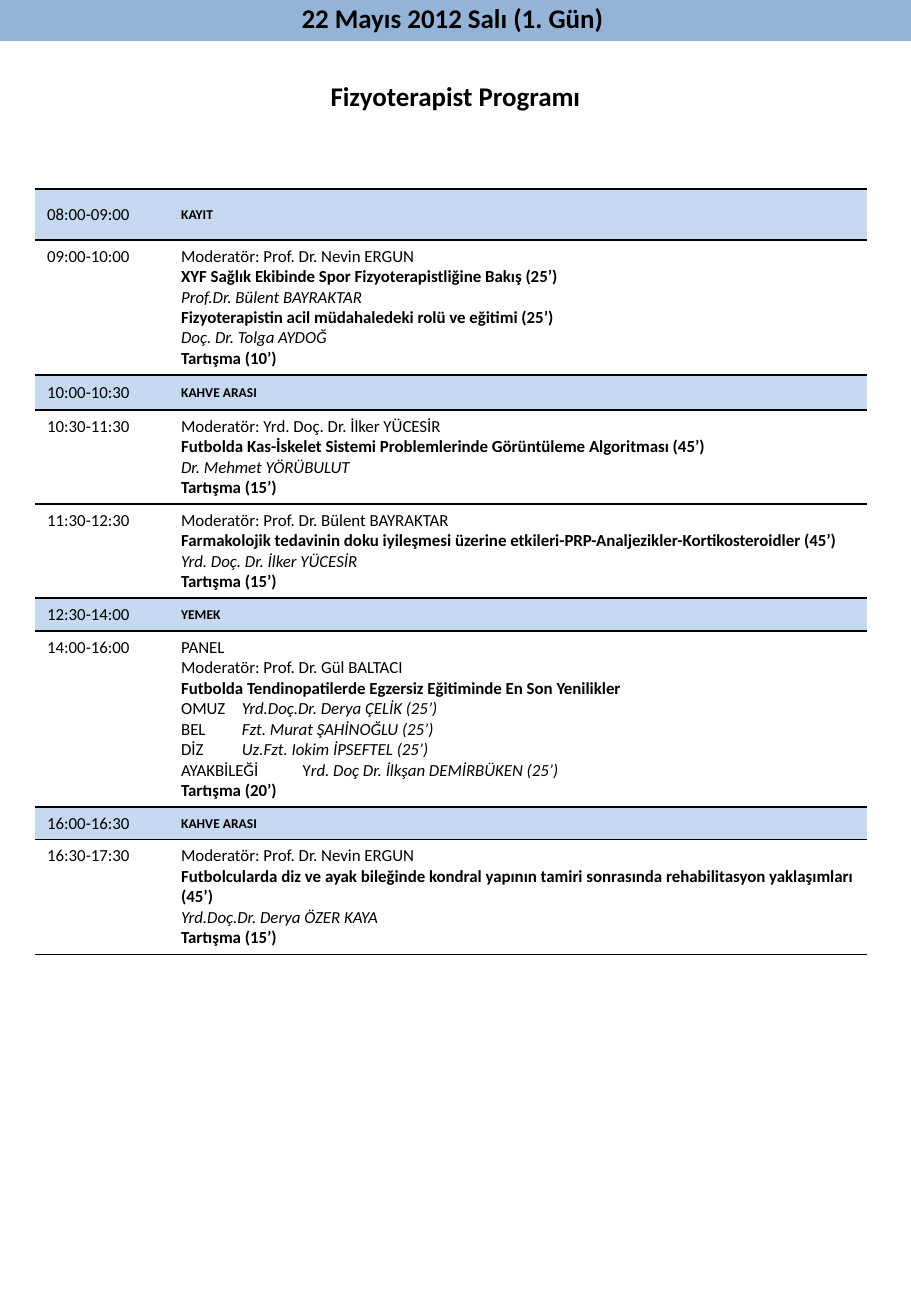
from pptx import Presentation
from pptx.dml.color import RGBColor
from pptx.enum.shapes import MSO_SHAPE as Shape
from pptx.enum.text import MSO_ANCHOR as Anchor, PP_ALIGN as Align
from pptx.oxml import parse_xml
from pptx.oxml.ns import nsdecls
from pptx.util import Pt

PX = 7526  # EMU per px
LINE = '<a:solidFill><a:srgbClr val="000000"/></a:solidFill>'


def color(code):
    return RGBColor.from_string(code)


def add_run(para, text, size, style=""):
    run = para.add_run()
    run.text = text
    font = run.font
    font.name, font.size = "Calibri", Pt(size)
    font.bold, font.italic = "b" in style, "i" in style
    font.color.rgb = color("000000")


# Rows: time, height, lines; a line is a list of (style, text) runs.
# A break has one plain string instead of lines.
rows = [
    ("08:00-09:00", 51, "KAYIT"),
    ("09:00-10:00", 134, [
        [("", "Moderatör: Prof. Dr. Nevin ERGUN")],
        [("b", "XYF Sağlık Ekibinde Spor Fizyoterapistliğine Bakış (25’)")],
        [("i", "Prof.Dr. Bülent BAYRAKTAR")],
        [("b", "Fizyoterapistin acil müdahaledeki rolü ve eğitimi (25’)")],
        [("i", "Doç. Dr. Tolga AYDOĞ")],
        [("b", "Tartışma (10’)")]]),
    ("10:00-10:30", 35, "KAHVE ARASI"),
    ("10:30-11:30", 93, [
        [("", "Moderatör: Yrd. Doç. Dr. İlker YÜCESİR")],
        [("b", "Futbolda Kas-İskelet Sistemi Problemlerinde "
               "Görüntüleme Algoritması (45’)")],
        [("i", "Dr. Mehmet YÖRÜBULUT")],
        [("b", "Tartışma (15’)")]]),
    ("11:30-12:30", 94, [
        [("", "Moderatör: Prof. Dr. Bülent BAYRAKTAR")],
        [("b", "Farmakolojik tedavinin doku iyileşmesi üzerine "
               "etkileri-PRP-Analjezikler-Kortikosteroidler (45’)")],
        [("i", "Yrd. Doç. Dr. İlker YÜCESİR")],
        [("b", "Tartışma (15’)")]]),
    ("12:30-14:00", 33, "YEMEK"),
    ("14:00-16:00", 175, [
        [("", "PANEL")],
        [("", "Moderatör: Prof. Dr. Gül BALTACI")],
        [("b", "Futbolda Tendinopatilerde Egzersiz Eğitiminde En Son Yenilikler")],
        [("", "OMUZ\t"), ("i", "Yrd.Doç.Dr. Derya ÇELİK (25’)")],
        [("", "BEL\t"), ("i", "Fzt. Murat ŞAHİNOĞLU (25’)")],
        [("", "DİZ\t"), ("i", "Uz.Fzt. Iokim İPSEFTEL (25’)")],
        [("", "AYAKBİLEĞİ\tY"), ("i", "rd. Doç Dr. İlkşan DEMİRBÜKEN (25’)")],
        [("b", "Tartışma (20’)")]]),
    ("16:00-16:30", 32, "KAHVE ARASI"),
    ("16:30-17:30", 114, [
        [("", "Moderatör: Prof. Dr. Nevin ERGUN")],
        [("b", "Futbolcularda diz ve ayak bileğinde kondral yapının tamiri "
               "sonrasında rehabilitasyon yaklaşımları (45’)")],
        [("i", "Yrd.Doç.Dr. Derya ÖZER KAYA")],
        [("b", "Tartışma (15’)")]]),
]

deck = Presentation()
deck.slide_width, deck.slide_height = 911 * PX, 1316 * PX
slide = deck.slides.add_slide(deck.slide_layouts[6])
shapes = slide.shapes

# Programme table
total = sum(high for _, high, _ in rows)
table = shapes.add_table(len(rows), 2, 35 * PX, 189 * PX, 832 * PX, total * PX).table
table.first_row = table.horz_banding = False
for col, wide in zip(table.columns, (134, 698)):
    col.width = wide * PX

for row, (time, high, lines) in zip(table.rows, rows):
    row.height = high * PX
    pause = isinstance(lines, str)
    size = 8 if pause else 10
    if pause:
        lines = [[("b", lines)]]
    slot, body = row.cells
    add_run(slot.text_frame.paragraphs[0], time, 10)
    slot.vertical_anchor = Anchor.MIDDLE if pause else Anchor.TOP
    body.vertical_anchor = Anchor.MIDDLE
    frame = body.text_frame
    for i, line in enumerate(lines):
        para = frame.add_paragraph() if i else frame.paragraphs[0]
        for style, text in line:
            add_run(para, text, size, style)

    # Rules above and below, none at the sides
    for cell in row.cells:
        props = cell._tc.get_or_add_tcPr()
        for side in "LRTB":
            paint = LINE if side in "TB" else "<a:noFill/>"
            props.append(parse_xml(
                f'<a:ln{side} {nsdecls("a")} w="12700">{paint}</a:ln{side}>'))
        if pause:
            cell.fill.solid()
            cell.fill.fore_color.rgb = color("C6D9F1")
        else:
            cell.fill.background()

# Day band
band = shapes.add_shape(Shape.RECTANGLE, 0, -4 * PX, 911 * PX, 45 * PX)
band.shadow.inherit = False
band.fill.solid()
band.fill.fore_color.rgb = color("95B3D7")
band.line.fill.background()

# Day and programme titles
title = shapes.add_textbox(293 * PX, 74 * PX, 325 * PX, 45 * PX)
for box, text in ((band, "22 Mayıs 2012 Salı (1. Gün) "),
                  (title, "Fizyoterapist Programı")):
    frame = box.text_frame
    frame.word_wrap = True
    frame.vertical_anchor = Anchor.TOP
    para = frame.paragraphs[0]
    para.alignment = Align.CENTER
    add_run(para, text, 16, "b")

deck.save("out.pptx")
